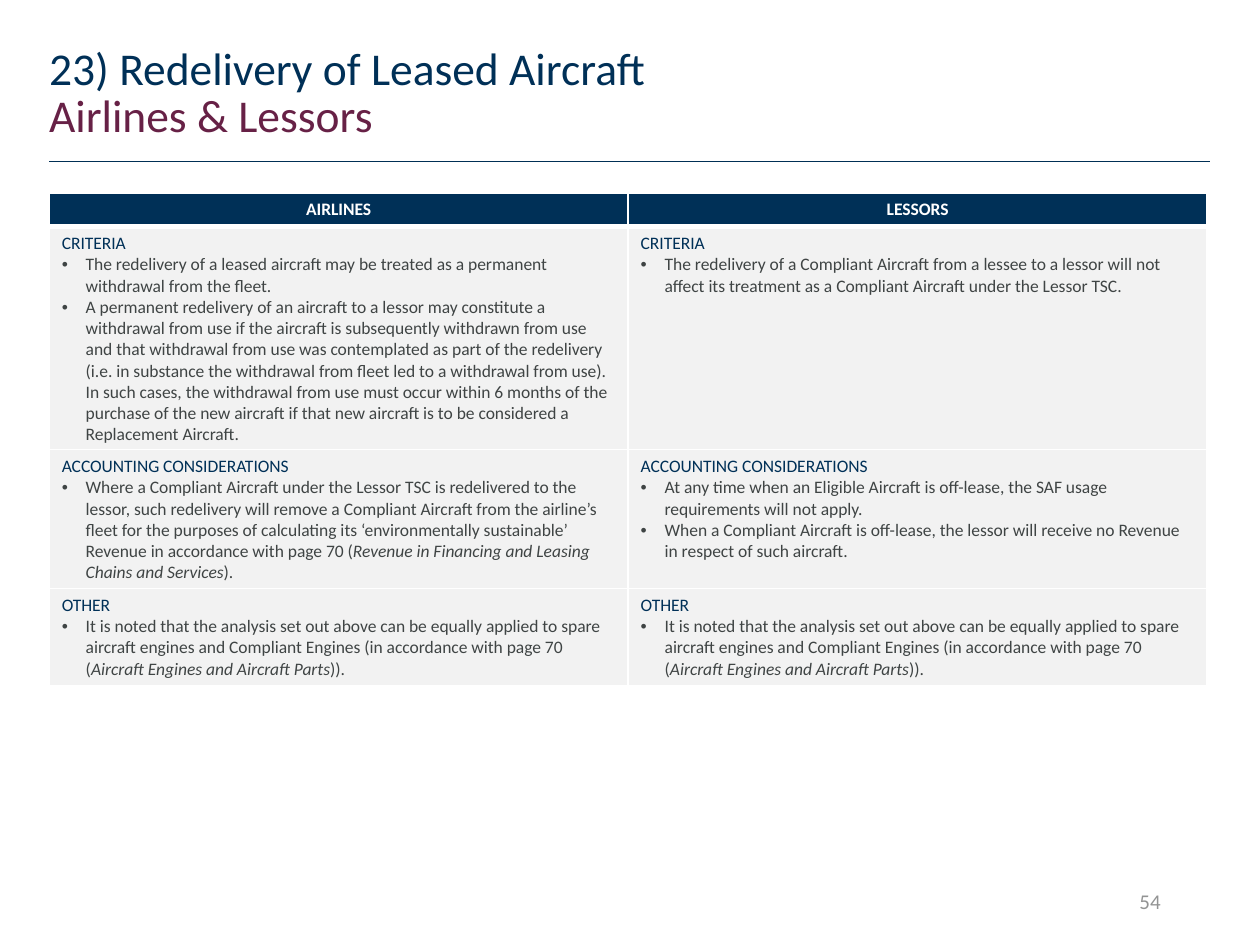
"""Build the slide on redelivery of leased aircraft for airlines and lessors."""
from lxml import etree
from pptx import Presentation
from pptx import util as u
from pptx.dml.color import RGBColor
from pptx.enum import shapes, text
from pptx.oxml.ns import qn

NAVY = RGBColor(0x00, 0x30, 0x57)
RULE = RGBColor(0x00, 0x2F, 0x55)
PLUM = RGBColor(0x67, 0x21, 0x46)
SLATE = RGBColor(0x3F, 0x44, 0x44)
GREY = RGBColor(0x93, 0x94, 0x94)
PALE = RGBColor(0xF2, 0xF2, 0xF2)
WHITE = RGBColor(0xFF, 0xFF, 0xFF)
FONT = "Calibri"

LEFT = 0.39
HEADINGS = [
    ("23) Redelivery of Leased Aircraft", NAVY, 0.39),
    ("Airlines & Lessors", PLUM, 0.76),
]
COLUMNS = ["AIRLINES", "LESSORS"]
COLUMN_WIDTH = 4.595
ROW_HEIGHTS = [0.27, 1.77, 1.1, 0.76]
ENGINES = [
    "It is noted that the analysis set out above can be equally applied to spare aircraft "
    "engines and Compliant Engines (in accordance with page 70 (",
    "Aircraft Engines and Aircraft Parts",
    ")).",
]
# Every second run of a bullet is italic.
SECTIONS = [
    ("CRITERIA", [
        [
            ["The redelivery of a leased aircraft may be treated as a permanent withdrawal "
             "from the fleet."],
            ["A permanent redelivery of an aircraft to a lessor may constitute a withdrawal "
             "from use if the aircraft is subsequently withdrawn from use and that withdrawal "
             "from use was contemplated as part of the redelivery (i.e. in substance the "
             "withdrawal from fleet led to a withdrawal from use). In such cases, the "
             "withdrawal from use must occur within 6 months of the purchase of the new "
             "aircraft if that new aircraft is to be considered a Replacement Aircraft."],
        ],
        [
            ["The redelivery of a Compliant Aircraft from a lessee to a lessor will not affect "
             "its treatment as a Compliant Aircraft under the Lessor TSC."],
        ],
    ]),
    ("ACCOUNTING CONSIDERATIONS", [
        [
            ["Where a Compliant Aircraft under the Lessor TSC is redelivered to the lessor, "
             "such redelivery will remove a Compliant Aircraft from the airline’s fleet for "
             "the purposes of calculating its ‘environmentally sustainable’ Revenue in "
             "accordance with page 70 (",
             "Revenue in Financing and Leasing Chains and Services",
             ")."],
        ],
        [
            ["At any time when an Eligible Aircraft is off-lease, the SAF usage requirements "
             "will not apply."],
            ["When a Compliant Aircraft is off-lease, the lessor will receive no Revenue in "
             "respect of such aircraft."],
        ],
    ]),
    ("OTHER", [[ENGINES], [ENGINES]]),
]


def add_span(para, words, size, color, bold=False, italic=False):
    span = para.add_run()
    span.text = words
    font = span.font
    font.name, font.size, font.color.rgb = FONT, u.Pt(size), color
    font.bold, font.italic = bold, italic


def add_label(page, area, words, size, color):
    box = page.shapes.add_textbox(*map(u.Inches, area))
    box.text_frame.word_wrap = True
    para = box.text_frame.paragraphs[0]
    add_span(para, words, size, color)
    return box.text_frame, para


def add_bullet(para):
    props = para._p.get_or_add_pPr()
    props.set("marL", str(u.Inches(0.19)))
    props.set("indent", str(u.Inches(-0.19)))
    etree.SubElement(props, qn("a:buFont"), typeface="Arial")
    etree.SubElement(props, qn("a:buChar"), char="•")


def style_cell(cell, fill, bottom=1):
    cell.fill.solid()
    cell.fill.fore_color.rgb = fill
    props = cell._tc.get_or_add_tcPr()
    edges = [("a:lnL", 1), ("a:lnR", 1), ("a:lnT", 1), ("a:lnB", bottom)]
    for place, (tag, width) in enumerate(edges):
        edge = etree.Element(qn(tag), w=str(u.Pt(width)))
        solid = etree.SubElement(edge, qn("a:solidFill"))
        etree.SubElement(solid, qn("a:srgbClr"), val=str(WHITE))
        props.insert(place, edge)


def fill_section(cell, heading, bullets):
    frame = cell.text_frame
    add_span(frame.paragraphs[0], heading, 10, NAVY)
    for bullet in bullets:
        para = frame.add_paragraph()
        add_bullet(para)
        for number, words in enumerate(bullet):
            add_span(para, words, 10, SLATE, italic=number % 2 == 1)


def add_comparison(page):
    area = (LEFT, 1.53, COLUMN_WIDTH * len(COLUMNS), sum(ROW_HEIGHTS))
    table = page.shapes.add_table(
        len(ROW_HEIGHTS), len(COLUMNS), *map(u.Inches, area)).table
    table.horz_banding = False
    for row, height in zip(table.rows, ROW_HEIGHTS):
        row.height = u.Inches(height)
    for index, name in enumerate(COLUMNS):
        table.columns[index].width = u.Inches(COLUMN_WIDTH)
        header = table.cell(0, index)
        style_cell(header, NAVY, bottom=3)
        para = header.text_frame.paragraphs[0]
        para.alignment = text.PP_ALIGN.CENTER
        add_span(para, name, 10, WHITE, bold=True)
        for row, (heading, sides) in enumerate(SECTIONS, start=1):
            cell = table.cell(row, index)
            style_cell(cell, PALE)
            fill_section(cell, heading, sides[index])


def main():
    deck = Presentation()
    deck.slide_width, deck.slide_height = u.Inches(10), u.Inches(7.5)
    page = deck.slides.add_slide(deck.slide_layouts[6])

    rule = page.shapes.add_connector(
        shapes.MSO_CONNECTOR.STRAIGHT, *map(u.Inches, (LEFT, 1.28, 9.6, 1.28)))
    rule.line.color.rgb, rule.line.width = RULE, u.Pt(0.75)
    etree.SubElement(rule._element.spPr, qn("a:effectLst"))

    for words, color, top in HEADINGS:
        frame, para = add_label(page, (LEFT, top, 9.2, 0.39), words, 26, color)
        frame.margin_left = frame.margin_right = 0
        frame.margin_top = frame.margin_bottom = 0
        para.line_spacing = u.Pt(26)

    add_comparison(page)

    frame, para = add_label(page, (7.06, 6.95, 2.25, 0.4), "54", 12, GREY)
    frame.vertical_anchor = text.MSO_ANCHOR.MIDDLE
    para.alignment = text.PP_ALIGN.RIGHT

    deck.save("out.pptx")


if __name__ == "__main__":
    main()
